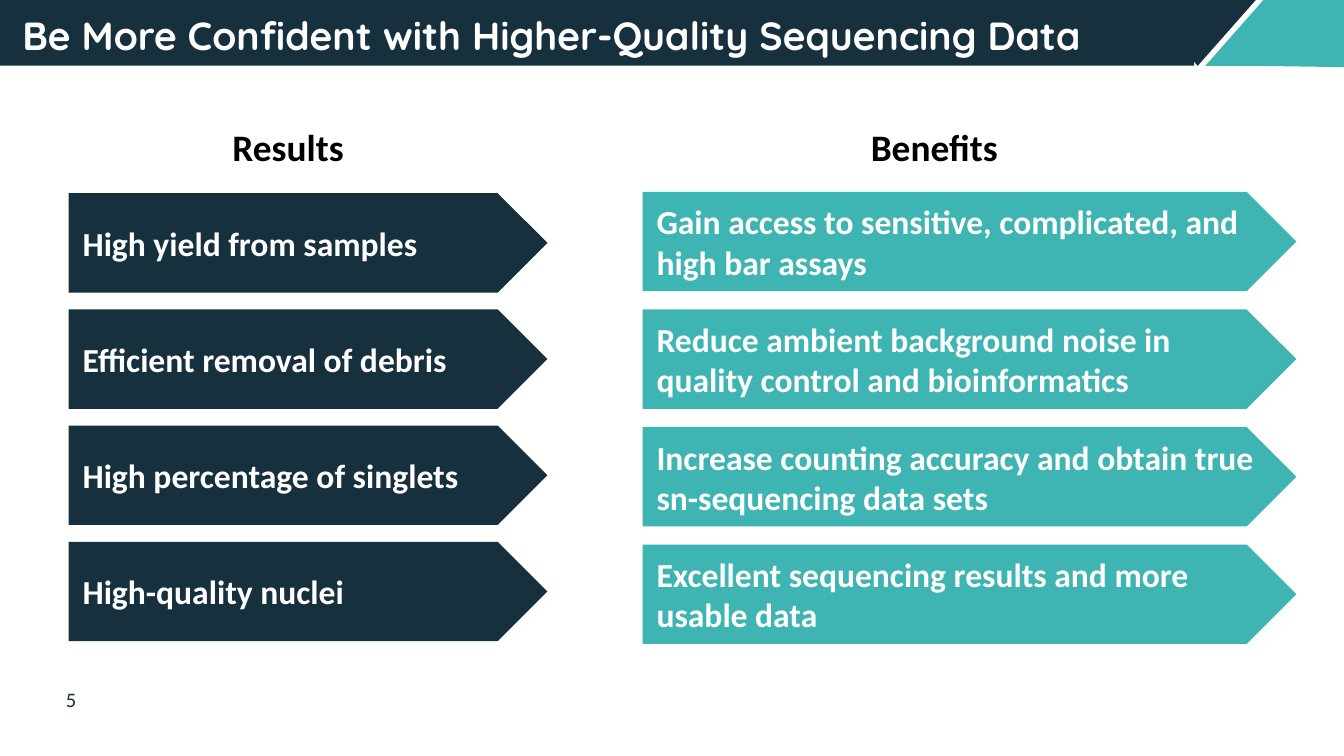
from pptx import Presentation
from pptx.dml.color import RGBColor
from pptx.enum.shapes import MSO_SHAPE as Shape
from pptx.enum.text import MSO_ANCHOR as Anchor, MSO_AUTO_SIZE as AutoSize, PP_ALIGN as Align
from pptx.util import Pt

PX = 9525
NAVY, TEAL, WHITE, BLACK = "17303E", "3EB5B3", "FFFFFF", "000000"
TITLE_FONT = {"name": "Quicksand", "size": Pt(21), "bold": True}
HEADING_FONT = {"name": "Calibri", "size": Pt(20), "bold": True}
ARROW_FONT = {"name": "Calibri", "size": Pt(18), "bold": True}
NUMBER_FONT = {"name": "Calibri", "size": Pt(11), "bold": False}
RESULTS = [
    "High yield from samples",
    "Efficient removal of debris",
    "High percentage of singlets",
    "High-quality nuclei",
]
BENEFITS = [
    "Gain access to sensitive, complicated, and high bar assays",
    "Reduce ambient background noise in quality control and bioinformatics",
    "Increase counting accuracy and obtain true sn-sequencing data sets",
    "Excellent sequencing results and more usable data",
]


def emu(*lengths):
    return [length * PX for length in lengths]


def color(value):
    return RGBColor.from_string(value)


def paint(shape, fill):
    shape.shadow.inherit = False
    shape.fill.solid()
    shape.fill.fore_color.rgb = color(fill)
    shape.line.fill.background()
    return shape


def add_preset(slide, kind, box, fill):
    return paint(slide.shapes.add_shape(kind, *emu(*box)), fill)


def write(shape, text, font, ink, insets, anchor=Anchor.MIDDLE):
    frame = shape.text_frame
    across, down = emu(*insets)
    layout = {
        "margin_left": across, "margin_right": across,
        "margin_top": down, "margin_bottom": down,
        "word_wrap": True, "auto_size": AutoSize.NONE, "vertical_anchor": anchor,
    }
    for name, value in layout.items():
        setattr(frame, name, value)
    para = frame.paragraphs[0]
    para.alignment = Align.LEFT
    span = para.add_run()
    span.text = text
    for name, value in font.items():
        setattr(span.font, name, value)
    span.font.color.rgb = color(ink)


def add_text(slide, box, text, font, ink, insets, anchor=Anchor.MIDDLE):
    write(slide.shapes.add_textbox(*emu(*box)), text, font, ink, insets, anchor)


def add_banner(slide, box, text):
    left, top, width, height = box
    right = left + width
    add_preset(slide, Shape.RECTANGLE, (left, top, 853, height), NAVY)
    corner = slide.shapes.build_freeform(right - 69, top + height, scale=PX)
    corner.add_line_segments([(right - 58, top), (right, top), (right, top + height + 1)])
    paint(corner.convert_to_shape(), TEAL)
    add_preset(slide, Shape.ISOSCELES_TRIANGLE, (right - 99, top, 83, height), TEAL)
    add_preset(slide, Shape.ISOSCELES_TRIANGLE, (right - 146, top, 83, height), NAVY).rotation = 180
    title = slide.shapes.title
    slide.shapes.element.append(title.element)
    title.left, title.top, title.width, title.height = emu(left + 9, top, 816, height + 3)
    write(title, text, TITLE_FONT, WHITE, (7, 4))


def add_column(slide, box, heading, heading_left, items, fill):
    left, top, width, height = box
    add_text(slide, (left + heading_left, 82, 129, 47), heading, HEADING_FONT, BLACK, (7, 7), Anchor.TOP)
    arrow_height = 71
    pitch = (height - arrow_height) // (len(items) - 1)
    for row, item in enumerate(items):
        arrow = add_preset(slide, Shape.PENTAGON, (left, top + row * pitch, width, arrow_height), fill)
        write(arrow, item, ARROW_FONT, WHITE, (10, 10))


def main():
    deck = Presentation()
    deck.slide_width, deck.slide_height = emu(960, 540)
    slide = deck.slides.add_slide(deck.slide_layouts[5])
    add_banner(slide, (0, 0, 960, 47), "Be More Confident with Higher-Quality Sequencing Data")
    add_column(slide, (49, 138, 342, 320), "Results", 110, RESULTS, NAVY)
    add_column(slide, (459, 137, 467, 323), "Benefits", 156, BENEFITS, TEAL)
    add_text(slide, (40, 485, 42, 29), "5", NUMBER_FONT, NAVY, (7, 4))
    deck.save("out.pptx")


if __name__ == "__main__":
    main()
